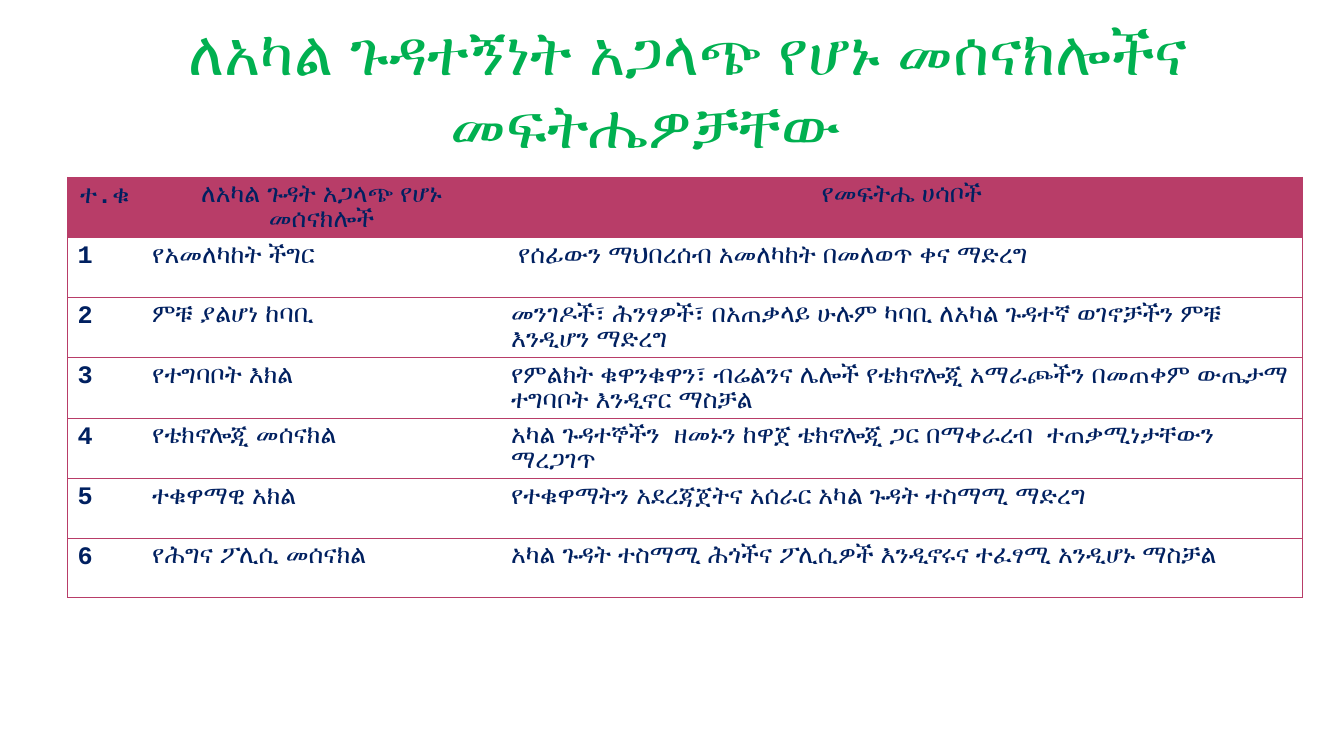
from dataclasses import dataclass

from pptx import Presentation
from pptx.dml.color import RGBColor
from pptx.enum.text import MSO_ANCHOR, MSO_AUTO_SIZE, PP_ALIGN
from pptx.oxml import parse_xml
from pptx.oxml.ns import nsdecls
from pptx.slide import Slide
from pptx.table import _Cell
from pptx.text.text import _Paragraph
from pptx.util import Inches, Pt

CENTER, LEFT = PP_ALIGN.CENTER, PP_ALIGN.LEFT
BOTTOM = MSO_ANCHOR.BOTTOM
NO_AUTOFIT = MSO_AUTO_SIZE.NONE
TITLE_ONLY = 5


@dataclass(frozen=True)
class Theme:
    font: str = "Courier New"
    title_color: str = "00B050"
    text_color: str = "002060"
    accent: str = "B83D68"
    title_size: float = 44
    text_size: float = 18
    border_width: float = 0.9


@dataclass(frozen=True)
class Barrier:
    name: str
    solution: str


THEME = Theme()
TITLE = "ለአካል ጉዳተኝነት አጋላጭ የሆኑ መሰናክሎችና መፍትሔዎቻቸው"
TITLE_INDENT = Inches(0.85)
HEADER = ("ተ.ቁ", "ለአካል ጉዳት አጋላጭ የሆኑ መሰናክሎች", "የመፍትሔ ሀሳቦች")
COLUMN_WIDTHS = (0.74, 3.56, 7.95)
ROW_HEIGHT = 0.59
BARRIERS = (
    Barrier("የአመለካከት ችግር", " የሰፊውን ማህበረሰብ አመለካከት በመለወጥ ቀና ማድረግ"),
    Barrier("ምቹ ያልሆነ ከባቢ",
            "መንገዶች፣ ሕንፃዎች፣ በአጠቃላይ ሁሉም ካባቢ ለአካል ጉዳተኛ ወገኖቻችን ምቹ እንዲሆን ማድረግ"),
    Barrier("የተግባቦት እክል",
            "የምልክት ቁዋንቁዋን፣ ብሬልንና ሌሎች የቴክኖሎጂ አማራጮችን በመጠቀም ውጤታማ ተግባቦት እንዲኖር ማስቻል"),
    Barrier("የቴክኖሎጂ መሰናክል",
            "አካል ጉዳተኞችን  ዘመኑን ከዋጀ ቴክኖሎጂ ጋር በማቀራረብ  ተጠቃሚነታቸውን ማረጋገጥ"),
    Barrier("ተቁዋማዊ አክል", "የተቁዋማትን አደረጃጀትና አሰራር አካል ጉዳት ተስማሚ ማድረግ"),
    Barrier("የሕግና ፖሊሲ መሰናክል",
            "አካል ጉዳት ተስማሚ ሕጎችና ፖሊሲዎች እንዲኖሩና ተፈፃሚ አንዲሆኑ ማስቻል"),
)


def format_paragraph(paragraph: _Paragraph, size: float, color: str,
                     alignment: PP_ALIGN) -> None:
    paragraph.alignment = alignment
    for run in paragraph.runs:
        run.font.name = THEME.font
        run.font.size = Pt(size)
        run.font.bold = True
        run.font.color.rgb = RGBColor.from_string(color)


def add_title(slide: Slide) -> None:
    title = slide.shapes.title
    title.left, title.top = Inches(0.67), Inches(0.35)
    title.width, title.height = Inches(12.32), Inches(1.25)
    text_frame = title.text_frame
    text_frame.text = TITLE
    text_frame.word_wrap = True
    text_frame.auto_size = NO_AUTOFIT
    text_frame.vertical_anchor = BOTTOM
    text_frame.margin_top = text_frame.margin_bottom = 0
    text_frame.margin_left = Inches(0.05)
    text_frame.margin_right = Inches(0.05) + TITLE_INDENT
    paragraph = text_frame.paragraphs[0]
    format_paragraph(paragraph, THEME.title_size, THEME.title_color, CENTER)
    properties = paragraph._p.get_or_add_pPr()
    properties.set("marL", "0")
    properties.set("indent", str(TITLE_INDENT))


def set_borders(cell: _Cell, is_first: bool, is_last: bool) -> None:
    visible = {"lnL": is_first, "lnR": is_last, "lnT": True, "lnB": True}
    properties = cell._tc.get_or_add_tcPr()
    for side, shown in visible.items():
        fill = (f'<a:solidFill><a:srgbClr val="{THEME.accent}"/></a:solidFill>'
                if shown else "<a:noFill/>")
        properties.append(parse_xml(
            f'<a:{side} {nsdecls("a")} w="{Pt(THEME.border_width)}">{fill}</a:{side}>'))


def add_barrier_table(slide: Slide) -> None:
    rows = [HEADER] + [(str(number), barrier.name, barrier.solution)
                       for number, barrier in enumerate(BARRIERS, 1)]
    table = slide.shapes.add_table(
        len(rows), len(HEADER), Inches(0.67), Inches(1.76),
        Inches(sum(COLUMN_WIDTHS)), Inches(ROW_HEIGHT * len(rows))).table
    table.first_row = table.horz_banding = False
    for column, width in zip(table.columns, COLUMN_WIDTHS):
        column.width = Inches(width)
    for row_index, texts in enumerate(rows):
        table.rows[row_index].height = Inches(ROW_HEIGHT)
        is_header = row_index == 0
        for column_index, text in enumerate(texts):
            cell = table.cell(row_index, column_index)
            cell.text_frame.text = text
            format_paragraph(cell.text_frame.paragraphs[0], THEME.text_size,
                             THEME.text_color, CENTER if is_header else LEFT)
            set_borders(cell, column_index == 0, column_index == len(HEADER) - 1)
            if is_header:
                cell.fill.solid()
                cell.fill.fore_color.rgb = RGBColor.from_string(THEME.accent)
            else:
                cell.fill.background()


def main() -> None:
    presentation = Presentation()
    presentation.slide_width = Inches(13.33)
    presentation.slide_height = Inches(7.5)
    slide = presentation.slides.add_slide(presentation.slide_layouts[TITLE_ONLY])
    add_barrier_table(slide)
    add_title(slide)
    presentation.save("out.pptx")


if __name__ == "__main__":
    main()
